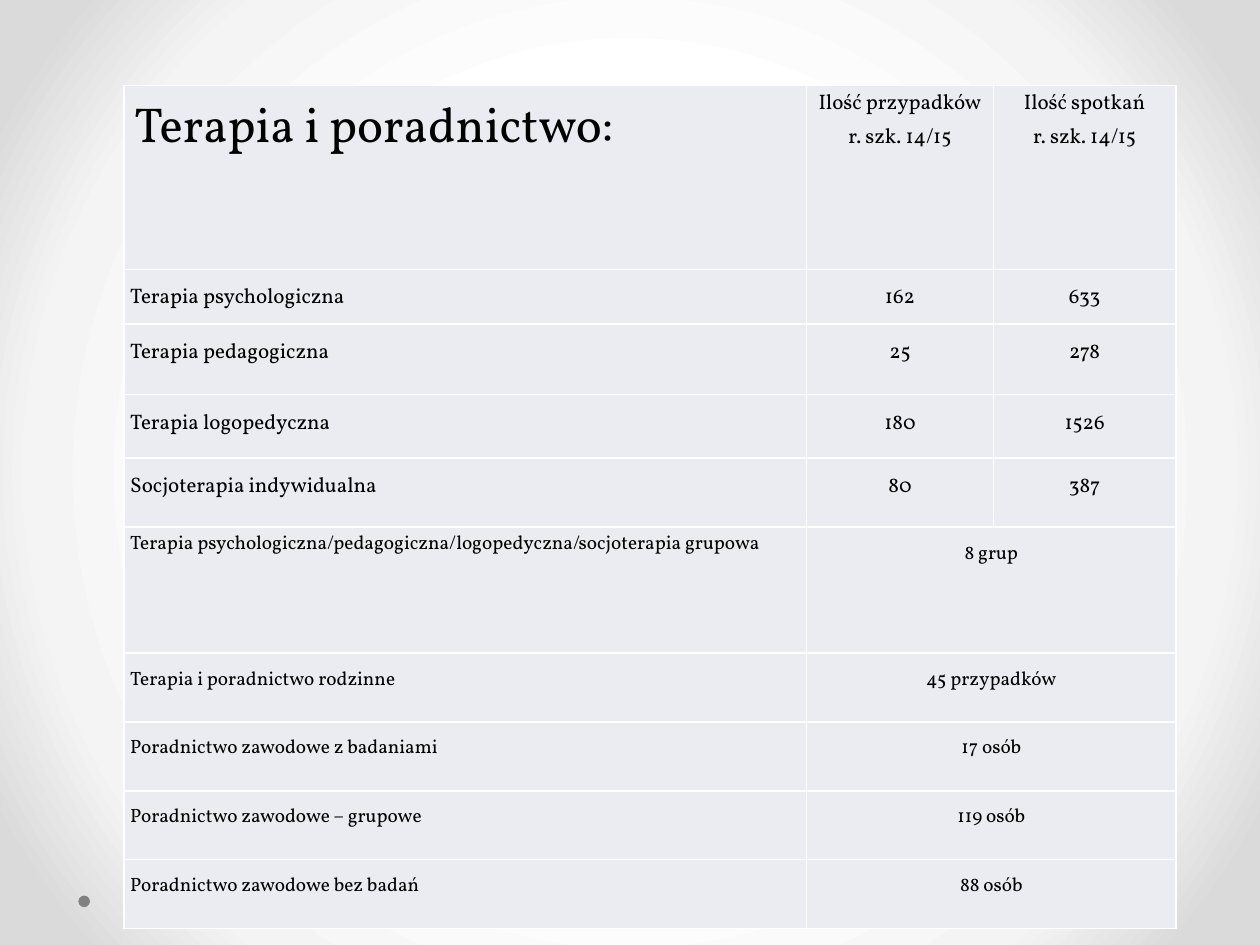
from lxml import etree
from pptx import Presentation
from pptx.dml import color
from pptx.enum import shapes, text
from pptx.oxml import ns
from pptx.util import Pt

COLS = [390.2, 106.6, 104.4]
ROWS = [105.1, 31.2, 40.5, 36.2, 39.4, 72] + [39.4] * 4
HEADS = [
    ["Ilość przypadków", "r. szk. 14/15"],
    ["Ilość spotkań", "r. szk. 14/15"],
]
CASES = [
    ("Terapia psychologiczna", "162", "633"),
    ("Terapia pedagogiczna", "25", "278"),
    ("Terapia logopedyczna", "180", "1526"),
    ("Socjoterapia indywidualna", "80", "387"),
]
GROUPS = [
    ("Terapia psychologiczna/pedagogiczna/logopedyczna/socjoterapia grupowa", "8 grup"),
    ("Terapia i poradnictwo rodzinne", "45 przypadków"),
    ("Poradnictwo zawodowe z badaniami", "17 osób"),
    ("Poradnictwo zawodowe – grupowe", "119 osób"),
    ("Poradnictwo zawodowe bez badań", "88 osób"),
]
LEFT, MID = text.PP_ALIGN.JUSTIFY, text.PP_ALIGN.CENTER


def rgb(code):
    return color.RGBColor.from_string(code)


def apply(item, style):
    for name, value in style.items():
        setattr(item, name, value)


def node(up, tag, **attrs):
    return etree.SubElement(up, ns.qn(tag), attrs)


def paint(up, code):
    node(node(up, "a:solidFill"), "a:srgbClr", val=code)


def backdrop(slide):
    base = slide._element.cSld
    back = node(base, "p:bg")
    base.insert(0, back)
    props = node(back, "p:bgPr")
    grad = node(props, "a:gradFill", rotWithShape="1")
    stops = node(grad, "a:gsLst")
    for pos, code in [(50, "FFFFFF"), (76, "F4F4F4"), (92, "DADADA")]:
        stop = node(stops, "a:gs", pos=str(pos * 1000))
        node(stop, "a:srgbClr", val=code)
    way = node(grad, "a:path", path="circle")
    node(way, "a:fillToRect", **dict.fromkeys("ltrb", "50000"))
    node(props, "a:effectLst")


def dots(slide, left, top, width, size):
    for x in (left, left + width - size):
        dot = slide.shapes.add_shape(
            shapes.MSO_SHAPE.OVAL, Pt(x), Pt(top), Pt(size), Pt(size))
        dot.shadow.inherit = False
        dot.fill.solid()
        dot.fill.fore_color.rgb = rgb("808080")
        dot.line.fill.background()


def frame(cell):
    apply(cell, {"margin_left": Pt(3.6), "margin_right": Pt(3.6),
                 "margin_top": 0, "margin_bottom": 0})
    props = cell._tc.get_or_add_tcPr()
    for side in ("a:lnL", "a:lnR", "a:lnT", "a:lnB"):
        paint(node(props, side, w=str(Pt(1))), "FFFFFF")
    cell.fill.solid()
    cell.fill.fore_color.rgb = rgb("EAECF2")


def write(cell, lines, align, size=12, space=1.5):
    for i, line in enumerate(lines):
        para = cell.text_frame.paragraphs[0] if i == 0 else cell.text_frame.add_paragraph()
        apply(para, {"alignment": align, "line_spacing": space})
        add(para, line, size)


def add(para, words, size):
    run = para.add_run()
    run.text = words
    apply(run.font, {"name": "Vollkorn", "size": Pt(size), "bold": False})
    run.font.color.rgb = rgb("000000")


def table(slide, left, top, width, height):
    grid = slide.shapes.add_table(
        len(ROWS), len(COLS), Pt(left), Pt(top), Pt(width), Pt(height)).table
    apply(grid, {"first_row": False, "horz_banding": False})
    for col, size in zip(grid.columns, COLS):
        col.width = Pt(size)
    for row, size in zip(grid.rows, ROWS):
        row.height = Pt(size)
    for cell in grid.iter_cells():
        frame(cell)

    title = grid.cell(0, 0)
    write(title, [" "], LEFT, space=1.15)
    add(title.text_frame.paragraphs[0], "Terapia i poradnictwo:", 28)
    for c, lines in enumerate(HEADS, 1):
        write(grid.cell(0, c), lines, MID, space=1.15)

    for r, (name, *counts) in enumerate(CASES, 1):
        write(grid.cell(r, 0), [name], LEFT)
        for c, count in enumerate(counts, 1):
            write(grid.cell(r, c), [count], MID)

    first = 1 + len(CASES)
    for r, (name, total) in enumerate(GROUPS, first):
        grid.cell(r, 1).merge(grid.cell(r, 2))
        write(grid.cell(r, 0), [name], LEFT, 11, 1.15 if r == first else 1.5)
        write(grid.cell(r, 1), [total], MID, 11)


def main():
    deck = Presentation()
    apply(deck, {"slide_width": Pt(720), "slide_height": Pt(540)})
    slide = deck.slides.add_slide(deck.slide_layouts[6])
    backdrop(slide)
    dots(slide, 44.8, 511.8, 627.7, 6.6)
    table(slide, 70.8, 48.8, sum(COLS), sum(ROWS))
    deck.save("out.pptx")


if __name__ == "__main__":
    main()
